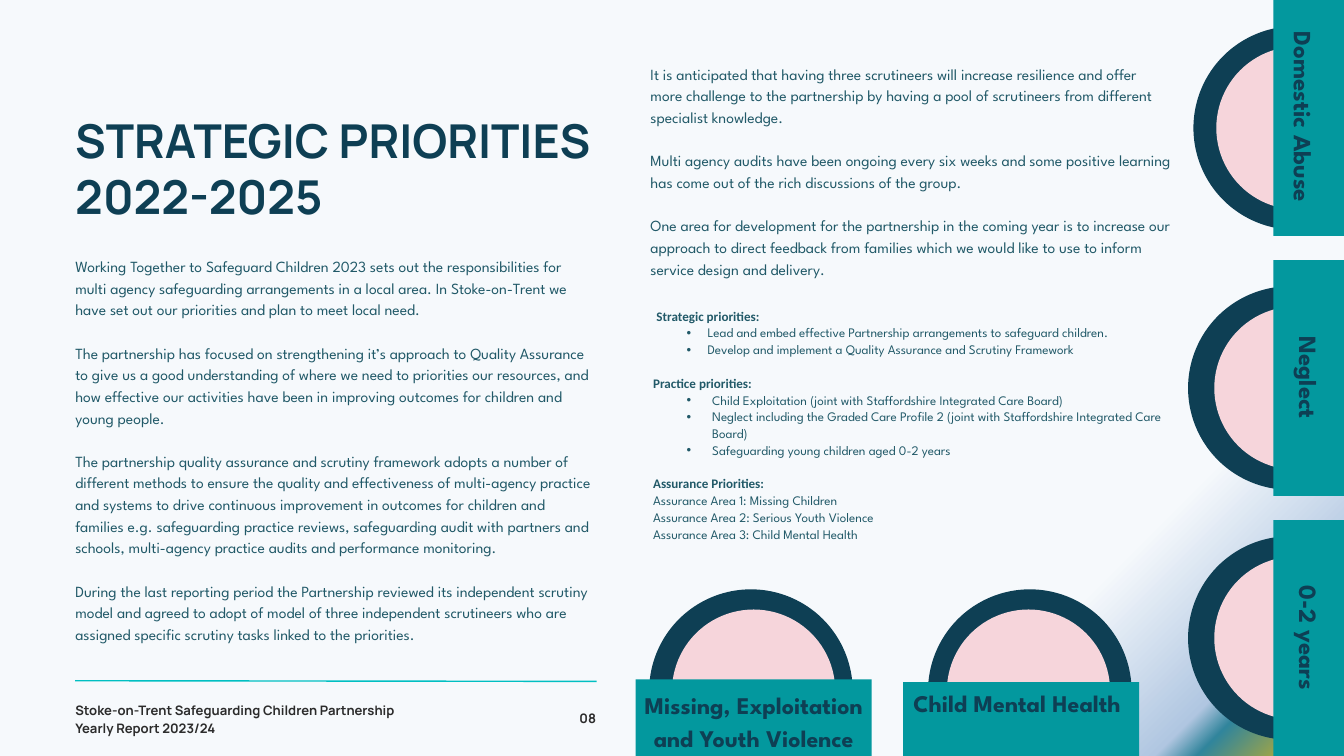
from lxml import etree
from pptx import Presentation
from pptx import util as u
from pptx.dml.color import RGBColor
from pptx.enum import shapes, text
from pptx.oxml.ns import qn

NAVY = RGBColor(0x0E, 0x3F, 0x54)
PINK = RGBColor(0xF6, 0xD5, 0xDB)
TEAL = RGBColor(0x03, 0x98, 0x9E)
AQUA = RGBColor(0x01, 0xBF, 0xC2)
BODY = RGBColor(0x21, 0x59, 0x68)
INK = RGBColor(0x2B, 0x2B, 0x2B)

SPARTAN, MANROPE = "League Spartan", "Manrope"
LEFT, CENTER, RIGHT = text.PP_ALIGN.LEFT, text.PP_ALIGN.CENTER, text.PP_ALIGN.RIGHT
GLOW = [(0, "FFC000", 100), (7, "31859C", 100), (9, "B0C6E1", 100), (20, "F6F9FC", 65)]

TITLE = dict(name=MANROPE, size=u.Pt(50), bold=True)
COPY = dict(name=SPARTAN, size=u.Pt(16.6))
FOOTER = dict(name=MANROPE, size=u.Pt(14), bold=True)
SIDE_LABEL = dict(name=SPARTAN, size=u.Pt(26.6), bold=True)
BASE_LABEL = dict(name=SPARTAN, size=u.Pt(25.6), bold=True)
LIST_HEAD = dict(name="Calibri", size=u.Pt(14), bold=True)
LIST_ITEM = dict(name=SPARTAN, size=u.Pt(14))

INTRO = [
    "Working Together to Safeguard Children 2023 sets out the responsibilities for multi agency "
    "safeguarding arrangements in a local area. In Stoke-on-Trent we have set out our priorities "
    "and plan to meet local need.",
    "The partnership has focused on strengthening it’s approach to Quality Assurance to give us a "
    "good understanding of where we need to priorities our resources, and how effective our "
    "activities have been in improving outcomes for children and young people.",
    "The partnership quality assurance and scrutiny framework adopts a number of different methods "
    "to ensure the quality and effectiveness of multi-agency practice and systems to drive "
    "continuous improvement in outcomes for children and families e.g. safeguarding practice "
    "reviews, safeguarding audit with partners and schools, multi-agency practice audits and "
    "performance monitoring.",
    "During the last reporting period the Partnership reviewed its independent scrutiny model and "
    "agreed to adopt of model of three independent scrutineers who are assigned specific scrutiny "
    "tasks linked to the priorities.",
]
OUTLOOK = [
    "It is anticipated that having three scrutineers will increase resilience and offer more "
    "challenge to the partnership by having a pool of scrutineers from different specialist "
    "knowledge.",
    "Multi agency audits have been ongoing every six weeks and some positive learning has come out "
    "of the rich discussions of the group.",
    "One area for development for the partnership in the coming year is to increase our approach "
    "to direct feedback from families which we would like to use to inform service design and "
    "delivery.",
]
# heading, heading indent, bullet (margin, hanging) or None, items
PRIORITIES = [
    ("Strategic priorities:", 0.05, (0.81, -0.31), [
        "Lead and embed effective Partnership arrangements to safeguard children.",
        "Develop and implement a Quality Assurance and Scrutiny Framework"]),
    ("Practice priorities:", 0, (0.88, -0.38), [
        "Child Exploitation (joint with Staffordshire Integrated Care Board)",
        "Neglect including the Graded Care Profile 2 (joint with Staffordshire Integrated "
        "Care Board)",
        "Safeguarding young children aged 0-2 years"]),
    ("Assurance Priorities:", 0, None, [
        "Assurance Area 1: Missing Children",
        "Assurance Area 2: Serious Youth Violence",
        "Assurance Area 3: Child Mental Health"]),
]


class Page:
    def __init__(self, prs):
        self.s = prs.slides.add_slide(prs.slide_layouts[6])

    def glow(self, stops):
        """Fill the background with a gradient spreading from the bottom right corner."""
        self.s.background.fill.gradient()
        grad = self.s.element.find(".//" + qn("a:gradFill"))
        for child in list(grad):
            grad.remove(child)
        gs_list = etree.SubElement(grad, qn("a:gsLst"))
        for pos, rgb, alpha in stops:
            gs = etree.SubElement(gs_list, qn("a:gs"), pos=str(pos * 1000))
            color = etree.SubElement(gs, qn("a:srgbClr"), val=rgb)
            if alpha < 100:
                etree.SubElement(color, qn("a:alpha"), val=str(alpha * 1000))
        circle = etree.SubElement(grad, qn("a:path"), path="circle")
        etree.SubElement(circle, qn("a:fillToRect"), l="100000", t="100000")

    def shape(self, kind, box, color):
        sp = self.s.shapes.add_shape(kind, *map(u.Inches, box))
        sp.shadow.inherit = False
        sp.fill.solid()
        sp.fill.fore_color.rgb = color
        sp.line.fill.background()

    def ring(self, left, top, inner_left):
        oval = shapes.MSO_SHAPE.OVAL
        self.shape(oval, (left, top, 3.03, 3.03), NAVY)
        self.shape(oval, (inner_left, top + 0.3, 2.43, 2.43), PINK)

    def panel(self, *box):
        self.shape(shapes.MSO_SHAPE.RECTANGLE, box, TEAL)

    def rule(self, x1, y1, x2, y2, color, width):
        ln = self.s.shapes.add_connector(
            shapes.MSO_CONNECTOR.STRAIGHT, *map(u.Inches, (x1, y1, x2, y2)))
        ln.line.color.rgb = color
        ln.line.width = u.Pt(width)
        etree.SubElement(ln.element.spPr, qn("a:effectLst"))

    def frame(self, box, rotation=0, margins=(0, 0)):
        sp = self.s.shapes.add_textbox(*map(u.Inches, box))
        sp.rotation = rotation
        tf = sp.text_frame
        tf.word_wrap = True
        tf.margin_left = tf.margin_right = u.Inches(margins[0])
        tf.margin_top = tf.margin_bottom = u.Inches(margins[1])
        return tf

    def paragraph(self, tf, words, font, color, spacing, before=0, align=LEFT,
                  margin=0, hanging=0):
        """Add a paragraph; a hanging indent gives it a bullet."""
        first = not tf.paragraphs[0].runs
        p = tf.paragraphs[0] if first else tf.add_paragraph()
        p.alignment = align
        p.line_spacing = spacing
        if before and not first:
            p.space_before = u.Pt(before)
        if margin:
            pPr = p._p.get_or_add_pPr()
            pPr.set("marL", str(u.Inches(margin)))
            pPr.set("indent", str(u.Inches(hanging)))
            if hanging:
                etree.SubElement(pPr, qn("a:buFont"), typeface="Arial")
                etree.SubElement(pPr, qn("a:buChar"), char="•")
        r = p.add_run()
        r.text = words
        for key, value in font.items():
            setattr(r.font, key, value)
        r.font.color.rgb = color

    def text(self, box, lines, font, color, leading, before=0, align=LEFT, rotation=0):
        tf = self.frame(box, rotation)
        for line in lines:
            self.paragraph(tf, line, font, color, u.Pt(leading), before, align)

    def priorities(self, box, groups):
        tf = self.frame(box, margins=(0.1, 0.05))
        for heading, indent, bullet, items in groups:
            self.paragraph(tf, heading, LIST_HEAD, BODY, 1.07, before=18, margin=indent)
            margin, hanging = bullet or (0, 0)
            for item in items:
                self.paragraph(tf, item, LIST_ITEM, BODY, 1.07, margin=margin, hanging=hanging)


def main():
    prs = Presentation()
    prs.slide_width, prs.slide_height = u.Inches(20), u.Inches(11.25)
    page = Page(prs)
    page.glow(GLOW)
    page.rule(1.12, 10.13, 8.88, 10.14, AQUA, 1.5)

    side_tabs = [
        ("Domestic Abuse", (17.76, 0.39, 18.1), (17.9, 1.49)),
        ("Neglect", (17.68, 4.26, 18.07), (17.98, 5.37)),
        ("0-2 years", (17.68, 7.98, 18.07), (17.98, 9.24)),
    ]
    for i, (label, ring, corner) in enumerate(side_tabs):
        page.ring(*ring)
        page.panel(18.95, 3.87 * i, 1.17, 3.51)
        page.text((*corner, 3.09, 0.5), [label], SIDE_LABEL, NAVY, 37.2,
                  align=CENTER, rotation=90)

    base_tabs = [
        ("Missing, Exploitation and Youth Violence", (9.66, 8.77, 10), (9.46, 10.11),
         (9.49, 10.2, 3.45, 0.96)),
        ("Child Mental Health", (13.81, 8.77, 14.09), (13.44, 10.15),
         (13.55, 10.18, 3.17, 0.96)),
    ]
    for label, ring, corner, box in base_tabs:
        page.ring(*ring)
        page.panel(*corner, 3.51, 1.17)
        page.text(box, [label], BASE_LABEL, NAVY, 35.8, align=CENTER)

    page.text((1.12, 1.67, 8.57, 1.72), ["STRATEGIC PRIORITIES", "2022-2025"], TITLE, NAVY, 60)
    page.text((1.12, 3.78, 7.75, 6), INTRO, COPY, BODY, 23.2, before=23.2)
    page.text((9.68, 0.92, 7.75, 3.54), OUTLOOK, COPY, BODY, 23.2, before=23.2)
    page.priorities((9.62, 4.52, 7.89, 3.88), PRIORITIES)
    page.text((1.12, 10.41, 5.48, 0.55),
              ["Stoke-on-Trent Safeguarding Children Partnership", "Yearly Report 2023/24"],
              FOOTER, INK, 19.6)
    page.text((7.73, 10.53, 1.14, 0.27), ["08"], FOOTER, INK, 19.6, align=RIGHT)
    prs.save("out.pptx")


if __name__ == "__main__":
    main()
